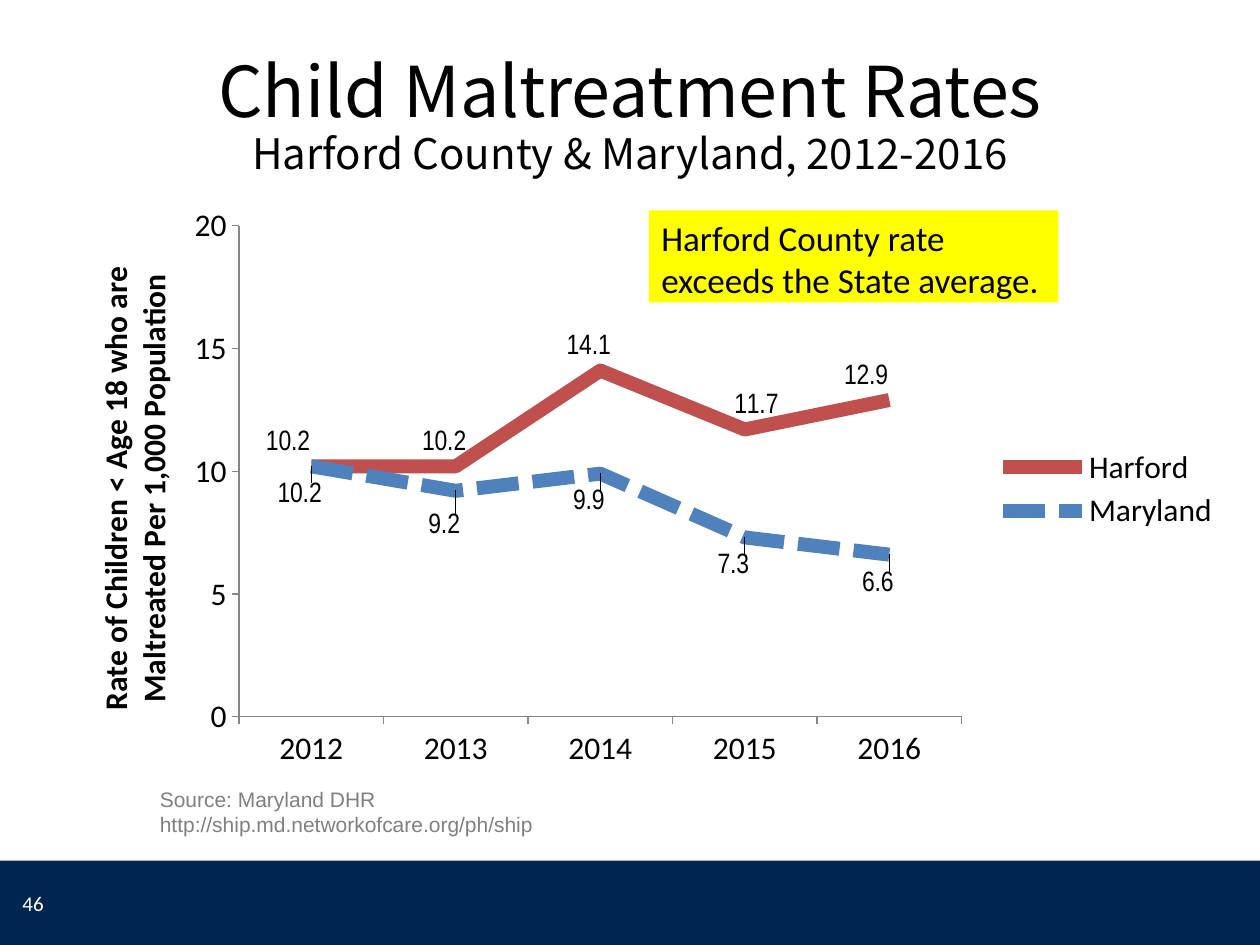
from lxml import etree
from pptx import Presentation
from pptx.chart.data import CategoryChartData
from pptx.dml.color import RGBColor
from pptx.enum.chart import XL_CHART_TYPE, XL_LABEL_POSITION, XL_LEGEND_POSITION, XL_TICK_MARK
from pptx.enum.dml import MSO_LINE
from pptx.enum.shapes import MSO_SHAPE
from pptx.enum.text import MSO_ANCHOR, PP_ALIGN
from pptx.oxml.ns import qn
from pptx.util import Inches, Pt

C15 = "http://schemas.microsoft.com/office/drawing/2012/chart"


def color(value):
    return RGBColor.from_string(value)


def style(font, size, name="Calibri", fill="000000", bold=False):
    font.size = Pt(size)
    font.name = name
    font.bold = bold
    font.color.rgb = color(fill)


def add_run(p, text, **fmt):
    r = p.add_run()
    r.text = text
    style(r.font, **fmt)


def add_text(s, box, lines, anchor=MSO_ANCHOR.TOP, **fmt):
    tf = s.shapes.add_textbox(*map(Inches, box)).text_frame
    tf.word_wrap = True
    tf.vertical_anchor = anchor
    for i, line in enumerate(lines):
        p = tf.add_paragraph() if i else tf.paragraphs[0]
        add_run(p, line, **fmt)


def add_rect(s, box, fill):
    sp = s.shapes.add_shape(MSO_SHAPE.RECTANGLE, *map(Inches, box))
    sp.shadow.inherit = False
    sp.fill.solid()
    sp.fill.fore_color.rgb = color(fill)
    sp.line.fill.background()
    return sp


def add_title(s, box):
    tf = s.shapes.add_textbox(*map(Inches, box)).text_frame
    tf.word_wrap = True
    tf.margin_top = Inches(0.44)
    p = tf.paragraphs[0]
    p.alignment = PP_ALIGN.CENTER
    p.line_spacing = 0.92
    add_run(p, "Child Maltreatment Rates", size=40, name="Noto Sans CJK SC")
    p.add_line_break()
    add_run(p, "Harford County & Maryland, 2012-2016", size=24, name="Noto Sans CJK SC")


def add_callout(s, box):
    tf = add_rect(s, box, "FFFF00").text_frame
    tf.word_wrap = True
    tf.vertical_anchor = MSO_ANCHOR.TOP
    p = tf.paragraphs[0]
    p.alignment = PP_ALIGN.LEFT
    add_run(p, "Harford County rate exceeds the State average.", size=20)


def add_footer(s, box):
    add_rect(s, box, "002650")
    left, top, _, height = box
    add_text(s, (left + 0.08, top + 0.14, 2.33, height - 0.27), ["46"],
             MSO_ANCHOR.MIDDLE, size=12, fill="FFFFFF")


def set_layout(parent, before, **values):
    for old in parent.findall(qn("c:layout")):
        parent.remove(old)
    layout = etree.Element(qn("c:layout"))
    manual = etree.SubElement(layout, qn("c:manualLayout"))
    for tag, value in values.items():
        etree.SubElement(manual, qn(f"c:{tag}")).set("val", str(value))
    parent.find(qn(f"c:{before}")).addprevious(layout)


def hide_leader_lines(labels):
    dlbls = labels._element
    for old in dlbls.findall(qn("c:showLeaderLines")):
        dlbls.remove(old)
    ext_list = etree.SubElement(dlbls, qn("c:extLst"))
    ext = etree.SubElement(ext_list, qn("c:ext"), nsmap={"c15": C15})
    ext.set("uri", "{CE6537A1-D6FC-4f65-9D91-7224C49458BB}")
    etree.SubElement(ext, f"{{{C15}}}showLeaderLines").set("val", "0")


def style_series(series, fill, position, offsets, dash=None):
    series.smooth = False
    line = series.format.line
    line.width = Pt(8)
    line.color.rgb = color(fill)
    if dash:
        line.dash_style = dash
    for i, (x, y) in enumerate(offsets):
        label = series.points[i].data_label
        style(label.font, 16, "Arial Narrow")
        label.position = position
        dlbl = series.data_labels._element.find(f"{qn('c:dLbl')}[{i + 1}]")
        before = "spPr" if dlbl.find(qn("c:spPr")) is not None else "txPr"
        set_layout(dlbl, before, x=x, y=y)
    labels = series.data_labels
    labels.show_value = True
    labels.position = position
    style(labels.font, 16, "Arial Narrow")
    hide_leader_lines(labels)


def style_axis(axis):
    axis.has_major_gridlines = False
    axis.major_tick_mark = XL_TICK_MARK.OUTSIDE
    axis.minor_tick_mark = XL_TICK_MARK.NONE
    axis.format.line.color.rgb = color("868686")
    axis.format.line.width = Pt(0.75)
    style(axis.tick_labels.font, 18)


def add_rate_chart(s, box):
    data = CategoryChartData()
    data.categories = ["2012", "2013", "2014", "2015", "2016"]
    data.add_series("Harford", [10.2, 10.2, 14.1, 11.7, 12.9])
    data.add_series("Maryland", [10.2, 9.2, 9.9, 7.3, 6.6])
    chart = s.shapes.add_chart(XL_CHART_TYPE.LINE, *map(Inches, box), data).chart
    style(chart.font, 18)
    chart.has_title = False
    plot = chart.plots[0]
    plot.vary_by_categories = False
    harford, maryland = plot.series
    style_series(harford, "C0504D", XL_LABEL_POSITION.ABOVE,
                 [(-0.02, -0.01), (-0.01, -0.01), (-0.01, -0.01), (0.01, -0.01), (-0.02, -0.01)])
    style_series(maryland, "4F81BD", XL_LABEL_POSITION.BELOW,
                 [(-0.01, 0.02), (-0.01, 0.03), (-0.01, 0.02), (-0.01, 0.02), (-0.01, 0.02)],
                 MSO_LINE.SQUARE_DOT)

    style_axis(chart.category_axis)
    axis = chart.value_axis
    style_axis(axis)
    axis.minimum_scale, axis.maximum_scale, axis.major_unit = 0, 20, 5
    axis.tick_labels.number_format = "0"
    axis.tick_labels.number_format_is_linked = False
    title = axis.axis_title
    p = title.text_frame.paragraphs[0]
    add_run(p, "Rate of Children < Age 18 who are Maltreated Per 1,000 Population",
            size=18, bold=True)
    set_layout(title._element, "overlay", xMode="edge", yMode="edge", x=0.02, y=0.11)

    chart.has_legend = True
    legend = chart.legend
    legend.position = XL_LEGEND_POSITION.RIGHT
    legend.include_in_layout = False
    style(legend.font, 18)
    set_layout(legend._element, "overlay", xMode="edge", yMode="edge",
               x=0.8, y=0.42, w=0.19, h=0.16)
    area = chart._chartSpace.chart.plotArea
    set_layout(area, "lineChart", layoutTarget="inner", xMode="edge", yMode="edge",
               x=0.15, y=0.05, w=0.62, h=0.84)


def main():
    prs = Presentation()
    prs.slide_width, prs.slide_height = Inches(10), Inches(7.5)
    s = prs.slides.add_slide(prs.slide_layouts[6])
    add_footer(s, (0, 6.83, 10, 0.67))
    add_title(s, (0.5, 0, 9, 1.33))
    add_rate_chart(s, (0.51, 1.56, 9.25, 4.64))
    add_text(s, (1.17, 6.19, 4.58, 0.5),
             ["Source: Maryland DHR", "http://ship.md.networkofcare.org/ph/ship"],
             size=12, name="Arial", fill="808080")
    add_callout(s, (5.15, 1.67, 3.25, 0.73))
    prs.save("out.pptx")


if __name__ == "__main__":
    main()
